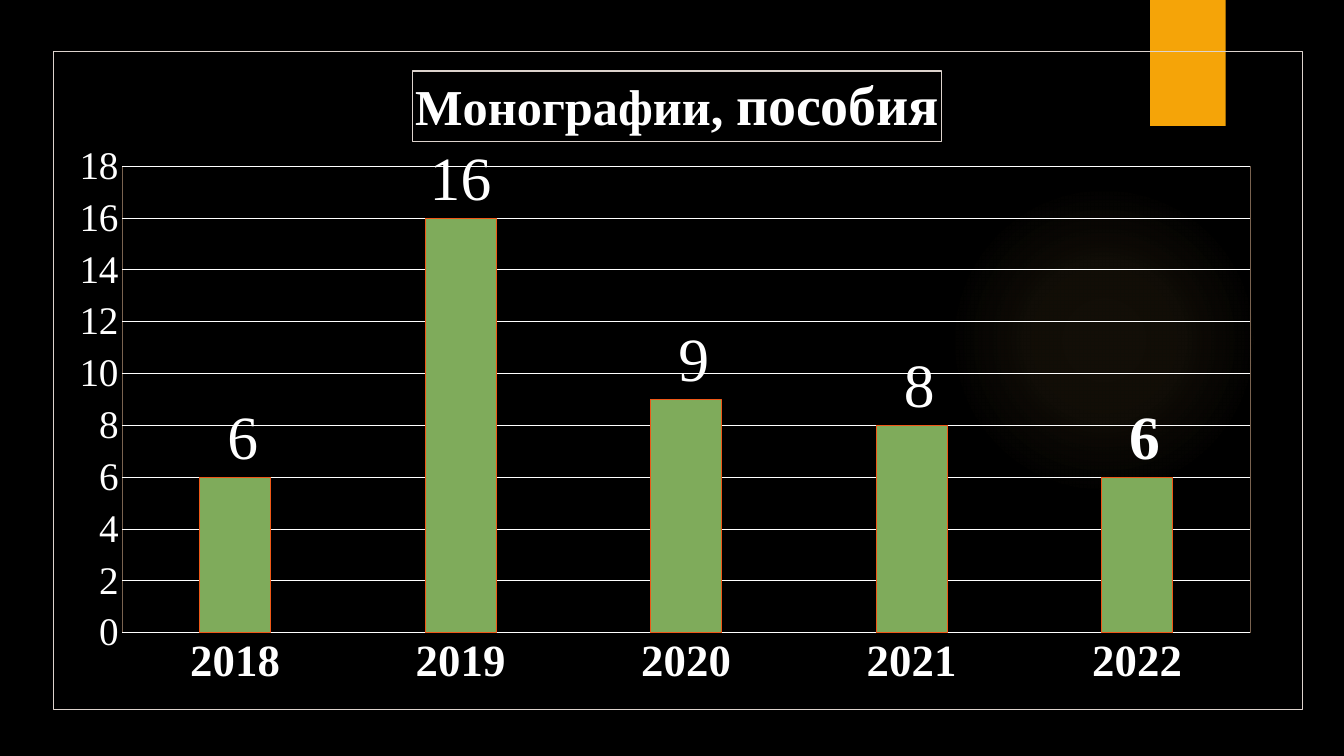
import pptx
import pptx.util
import pptx.oxml
import pptx.dml.color
import pptx.chart.data
import pptx.enum.chart
import pptx.enum.shapes

Pt = pptx.util.Pt
XL = pptx.enum.chart
SHAPE = pptx.enum.shapes.MSO_SHAPE
NS = ('xmlns:c="http://schemas.openxmlformats.org/drawingml/2006/chart" '
      'xmlns:a="http://schemas.openxmlformats.org/drawingml/2006/main"')
COLORS = {"back": "000000", "text": "FFFFFF", "frame": "DDD3CD", "tab": "F5A408",
          "glow": "FAC96A", "bar": "7FAB5B", "edge": "EE5818", "plot": "7A6350"}
SERIF, BASE = "Times New Roman", "League Spartan"

YEARS = ["2018", "2019", "2020", "2021", "2022"]
COUNTS = [6, 16, 9, 8, 6]
LABELS = [(" 6", False), ("16", False), (" 9", False), (" 8", False), (" 6", True)]
TITLE = [("Монографии, ", 36), ("пособия", 40)]
GLOW_STOPS = [(0, 7), (36, 6), (69, 0)]
GLOW_BOX = (677.5, 131.8, 221.8, 221.8)
TAB_BOX = (821.5, 0, 54, 90)
CHART_BOX = (38, 36.7, 892.8, 470.2)
PLOT_LAYOUT = {"x": 0.055, "y": 0.174, "w": 0.903, "h": 0.71}
TITLE_LAYOUT = {"x": 0.287, "y": 0.029}


def rgb(name):
    return pptx.dml.color.RGBColor.from_string(COLORS[name])


def style_font(font, size, bold=False, name=SERIF):
    font.size, font.bold, font.name = Pt(size), bold, name
    font.color.rgb = rgb("text")


def add_text(p, text, **fmt):
    r = p.add_run()
    r.text = text
    style_font(r.font, **fmt)


def style_line(line, color):
    line.color.rgb = rgb(color)
    line.width = Pt(0.75)


def add_shape(kind, box):
    s = slide.shapes.add_shape(kind, *map(Pt, box))
    s.shadow.inherit = False
    s.line.fill.background()
    return s


def manual_layout(places, inner=False):
    target = '<c:layoutTarget val="inner"/>' if inner else ""
    modes = "".join(f'<c:{k}Mode val="edge"/>' for k in "xy")
    values = "".join(f'<c:{k} val="{v}"/>' for k, v in places.items())
    return pptx.oxml.parse_xml(f"<c:layout {NS}><c:manualLayout>{target}{modes}{values}"
                               "</c:manualLayout></c:layout>")


def outline(color):
    return pptx.oxml.parse_xml(
        f'<c:spPr {NS}><a:noFill/><a:ln w="9525"><a:solidFill>'
        f'<a:srgbClr val="{COLORS[color]}"/></a:solidFill></a:ln></c:spPr>')


def set_layout(parent, layout):
    old = parent.find(layout.tag)
    if old is None:
        parent.insert(0, layout)
    else:
        parent.replace(old, layout)


prs = pptx.Presentation()
prs.slide_width, prs.slide_height = Pt(960), Pt(540)
slide = prs.slides.add_slide(prs.slide_layouts[6])
slide.background.fill.solid()
slide.background.fill.fore_color.rgb = rgb("back")

glow = add_shape(SHAPE.OVAL, GLOW_BOX)
glow.fill.gradient()
stops = "".join(f'<a:gs pos="{pos * 1000}"><a:srgbClr val="{COLORS["glow"]}">'
                f'<a:alpha val="{alpha * 1000}"/></a:srgbClr></a:gs>' for pos, alpha in GLOW_STOPS)
grad = pptx.oxml.parse_xml(
    f'<a:gradFill {NS}><a:gsLst>{stops}</a:gsLst><a:path path="circle">'
    '<a:fillToRect l="50000" t="50000" r="50000" b="50000"/></a:path></a:gradFill>')
sp_pr = glow._element.spPr
sp_pr.replace(sp_pr.find(grad.tag), grad)

tab = add_shape(SHAPE.RECTANGLE, TAB_BOX)
tab.fill.solid()
tab.fill.fore_color.rgb = rgb("tab")

data = pptx.chart.data.CategoryChartData()
data.categories = YEARS
data.add_series("Series 1", COUNTS)
chart = slide.shapes.add_chart(XL.XL_CHART_TYPE.COLUMN_CLUSTERED,
                               *map(Pt, CHART_BOX), data).chart
chart.has_legend = False
style_font(chart.font, 10, name=BASE)

title = chart.chart_title
p = title.text_frame.paragraphs[0]
for text, size in TITLE:
    add_text(p, text, size=size, bold=True)
title.include_in_layout = False
style_line(title.format.line, "frame")
set_layout(title._element, manual_layout(TITLE_LAYOUT))

cat, val = chart.category_axis, chart.value_axis
for axis, size, bold in ((cat, 32, True), (val, 28, False)):
    axis.major_tick_mark = axis.minor_tick_mark = XL.XL_TICK_MARK.NONE
    style_font(axis.tick_labels.font, size, bold)
style_line(cat.format.line, "text")
val.format.line.fill.background()
val.minimum_scale, val.maximum_scale, val.major_unit = 0, 18, 2
val.has_major_gridlines = True
style_line(val.major_gridlines.format.line, "text")

plot = chart.plots[0]
plot.vary_by_categories = False
plot.gap_width, plot.overlap = 219, -27
series = plot.series[0]
series.format.fill.solid()
series.format.fill.fore_color.rgb = rgb("bar")
style_line(series.format.line, "edge")
for i, (text, bold) in enumerate(LABELS):
    label = series.points[i].data_label
    add_text(label.text_frame.paragraphs[0], text, size=44, bold=bold)
    label.position = XL.XL_LABEL_POSITION.OUTSIDE_END

plot_area = chart._chartSpace.chart.plotArea
set_layout(plot_area, manual_layout(PLOT_LAYOUT, inner=True))
plot_area.append(outline("plot"))
chart._chartSpace.chart.addnext(outline("frame"))

prs.save("out.pptx")
